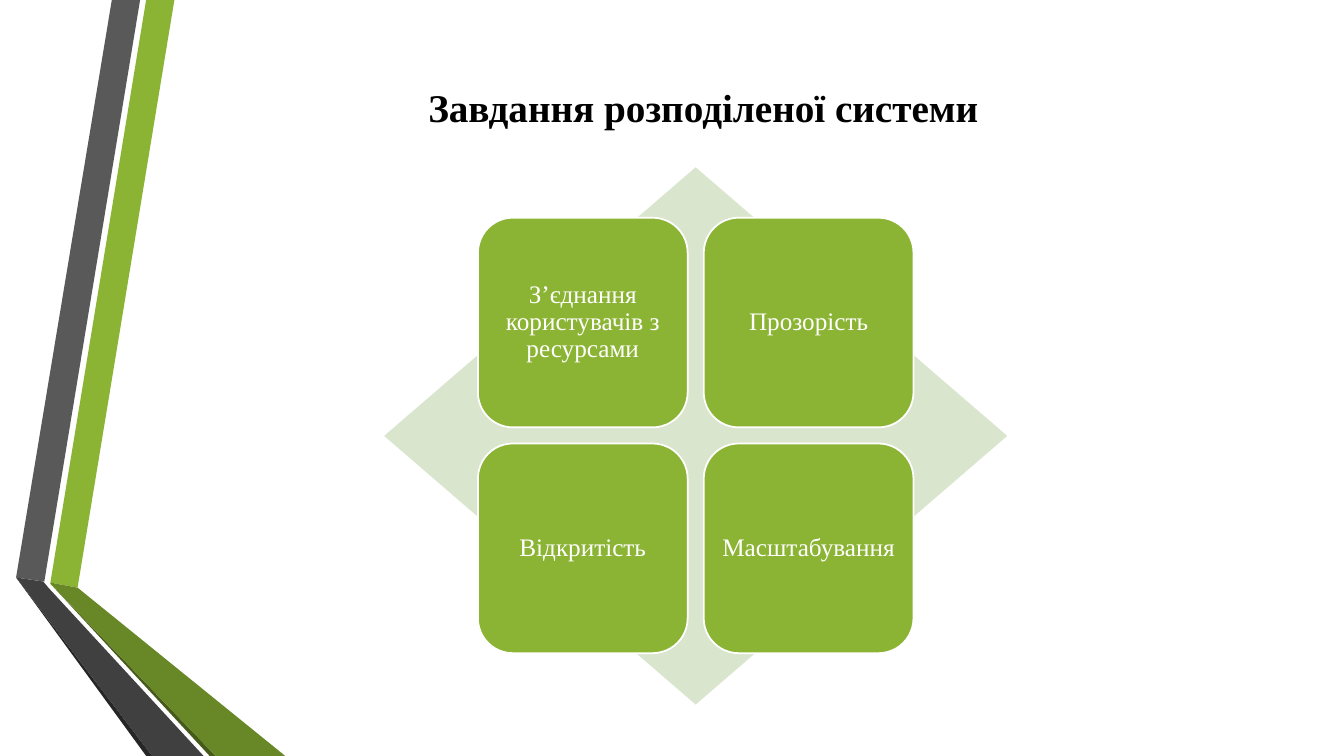
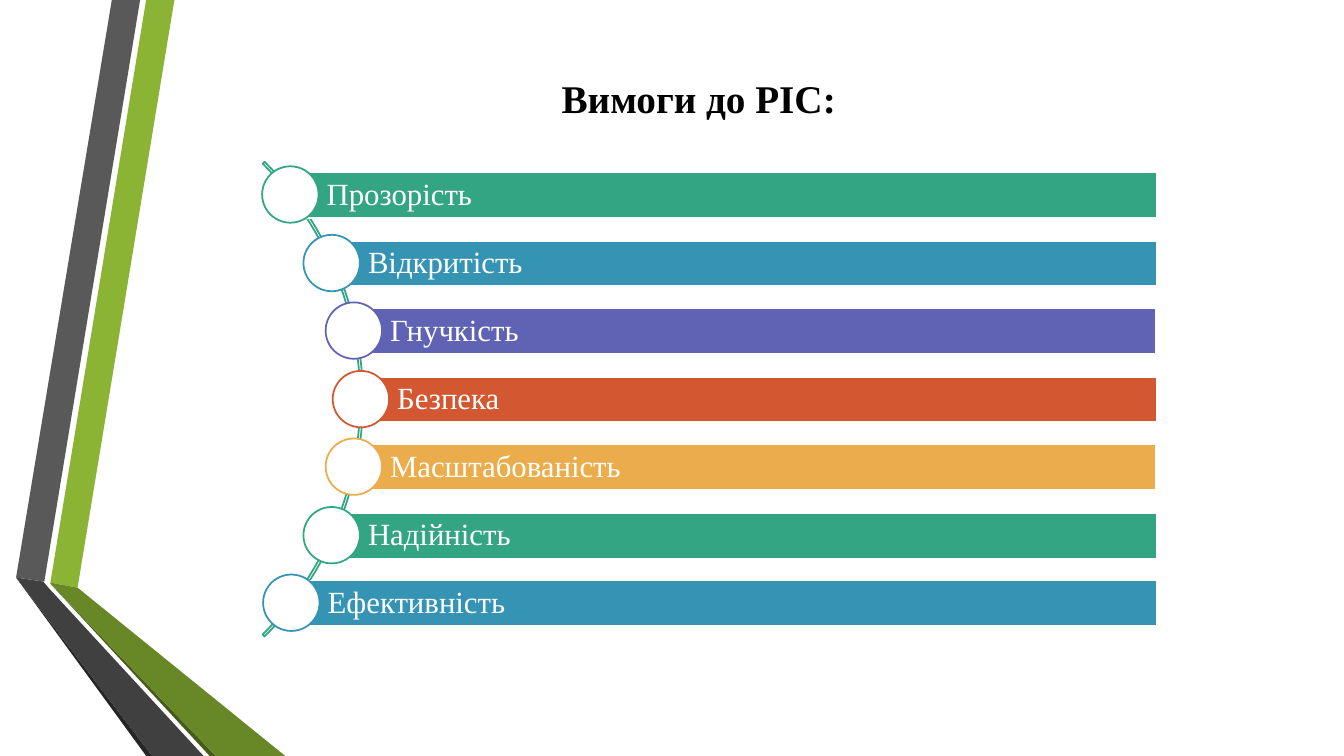
from math import sqrt

from pptx import Presentation
from pptx.dml.color import RGBColor
from pptx.enum.shapes import MSO_SHAPE
from pptx.enum.text import MSO_ANCHOR, PP_ALIGN
from pptx.util import Pt

PX = 9144
FONT = "Times New Roman"
RECT = MSO_SHAPE.RECTANGLE
ROUND = MSO_SHAPE.ROUNDED_RECTANGLE
OVAL = MSO_SHAPE.OVAL
DIAMOND = MSO_SHAPE.DIAMOND
ARC = MSO_SHAPE.BLOCK_ARC
MIDDLE = MSO_ANCHOR.MIDDLE
LEFT, CENTER = PP_ALIGN.LEFT, PP_ALIGN.CENTER

COLORS = {
    "white": "FFFFFF", "black": "000000", "lime": "8BB434", "pale": "DAE5CE",
    "gray": "595959", "coal": "404040", "ink": "262626",
    "moss": "688727", "olive": "465A1A", "teal": "33A583",
    "blue": "3594B4", "violet": "6063B4", "red": "D35731", "amber": "EBAC4B",
}
BANDS = [
    ("lime", [(50, 578), (77, 583), (173, 0), (145, 0)]),
    ("gray", [(139, 0), (111, 0), (16, 573), (44, 577)]),
    ("ink", [(16, 573), (145, 750), (151, 750)]),
    ("olive", [(50, 579), (208, 750), (214, 750)]),
    ("moss", [(50, 579), (214, 750), (283, 750), (77, 583), (50, 578)]),
    ("coal", [(202, 750), (48, 583), (43, 577), (16, 573), (151, 750)]),
]
TASKS = ["З’єднання користувачів з ресурсами", "Прозорість",
         "Відкритість", "Масштабування"]
NEEDS = ["Прозорість", "Відкритість", "Гнучкість", "Безпека",
         "Масштабованість", "Надійність", "Ефективність"]
HUES = ["teal", "blue", "violet", "red", "amber"]


def rgb(name):
    """Return the named colour."""
    return RGBColor.from_string(COLORS[name])


def paint(shape, fill=None, line=None):
    """Set fill and outline, and drop the shadow."""
    shape.shadow.inherit = False
    if fill:
        shape.fill.solid()
        shape.fill.fore_color.rgb = rgb(fill)
    else:
        shape.fill.background()
    if line:
        shape.line.color.rgb = rgb(line)
        shape.line.width = Pt(1.25)
    else:
        shape.line.fill.background()


def place(shape, x, y, w, h):
    """Move and size a shape in px."""
    shape.left, shape.top = x * PX, y * PX
    shape.width, shape.height = w * PX, h * PX


def add(slide, kind, box, fill=None, line=None):
    """Add a painted preset shape."""
    shape = slide.shapes.add_shape(kind, *(n * PX for n in box))
    paint(shape, fill, line)
    return shape


def write(shape, text, size, color="white", align=CENTER, bold=False):
    """Set and format one line of text."""
    frame = shape.text_frame
    frame.text = text
    frame.word_wrap = True
    frame.vertical_anchor = MIDDLE
    par = frame.paragraphs[0]
    par.alignment = align
    font = par.runs[0].font
    font.name, font.size, font.bold = FONT, Pt(size), bold
    font.color.rgb = rgb(color)


def label(shape, text, size, pad, left, align):
    """Write a tight label inside a shape."""
    write(shape, text, size, align=align)
    frame = shape.text_frame
    frame.margin_left = left * PX
    frame.margin_right = frame.margin_top = frame.margin_bottom = pad * PX
    frame.paragraphs[0].line_spacing = 0.9


def title(slide, text, box):
    """Fill the title placeholder."""
    place(slide.shapes.title, *box)
    write(slide.shapes.title, text, 28, "black", bold=True)


def bands(slide):
    """Draw the side bands and move them to the shared layout."""
    tree = slide.slide_layout.shapes.element
    for color, points in BANDS:
        form = slide.shapes.build_freeform(*points[0], scale=PX)
        form.add_line_segments(points[1:], close=True)
        band = form.convert_to_shape()
        paint(band, color)
        tree.append(band.element)


def matrix(slide):
    """Draw four tiles over a diamond."""
    add(slide, DIAMOND, (381, 166, 618, 533), "pale")
    for i, text in enumerate(TASKS):
        row, col = divmod(i, 2)
        box = (474 + 224 * col, 216 + 224 * row, 208, 208)
        tile = add(slide, ROUND, box, "lime", "white")
        label(tile, text, 18, 7, 7, CENTER)


def curve(slide):
    """Draw bars and circles along an arc."""
    arc = add(slide, ARC, (-306, 63, 666, 666), line="teal")
    for i, value in enumerate((189, 27, 0.004)):
        arc.adjustments[i] = value
    for i, text in enumerate(NEEDS):
        step = 135 * (i - 3) // 2
        x, y = 27 + round(sqrt(331 ** 2 - step ** 2)), 396 + step
        hue = HUES[i % len(HUES)]
        bar = add(slide, RECT, (x, y - 22, 1147 - x, 45), hue, "white")
        label(bar, text, 22, 6, 36, LEFT)
        add(slide, OVAL, (x - 28, y - 28, 56, 56), "white", hue)


def main():
    """Build and save the deck."""
    deck = Presentation()
    deck.slide_width, deck.slide_height = 1333 * PX, 750 * PX
    layout = deck.slide_layouts[5]
    tasks = deck.slides.add_slide(layout)
    bands(tasks)
    title(tasks, "Завдання розподіленої системи", (169, 54, 1057, 104))
    matrix(tasks)
    needs = deck.slides.add_slide(layout)
    title(needs, "Вимоги до РІС:", (155, 55, 1076, 85))
    curve(needs)
    deck.save("out.pptx")


if __name__ == "__main__":
    main()
